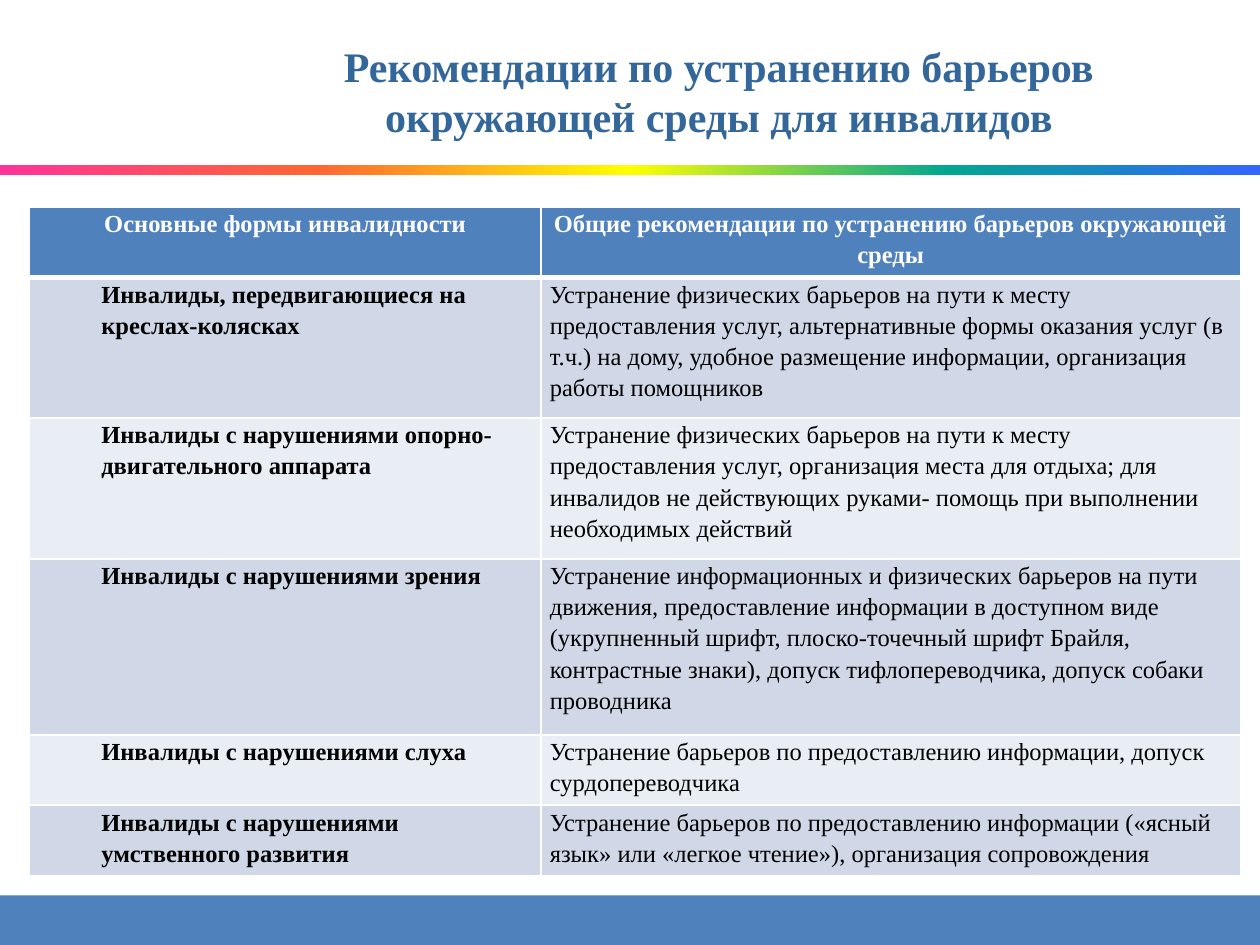
from typing import NamedTuple

from lxml.etree import SubElement
from pptx import Presentation
from pptx.dml.color import RGBColor
from pptx.enum.shapes import MSO_SHAPE
from pptx.enum.text import MSO_ANCHOR, PP_ALIGN
from pptx.oxml.ns import qn
from pptx.util import Pt

FONT = "Times New Roman"
HEX = {
    "title": "336699",
    "blue": "4F81BD",
    "dark": "D0D8E8",
    "light": "E9EDF4",
    "white": "FFFFFF",
    "black": "000000",
}
RAINBOW = ["FF3399", "FF6633", "FFFF00", "01A78F", "3366FF"]


class Row(NamedTuple):
    height: float
    form: str
    advice: str


ROWS = [
    Row(40.2, "Основные формы инвалидности",
        "Общие рекомендации по устранению барьеров окружающей среды"),
    Row(80.5, "Инвалиды, передвигающиеся на креслах-колясках",
        "Устранение физических барьеров на пути к месту предоставления услуг, "
        "альтернативные формы оказания услуг (в т.ч.) на дому, удобное "
        "размещение информации, организация работы помощников"),
    Row(80.5, "Инвалиды с нарушениями опорно-двигательного аппарата",
        "Устранение физических барьеров на пути к месту предоставления услуг, "
        "организация места для отдыха; для инвалидов не действующих руками- "
        "помощь при выполнении необходимых действий"),
    Row(100.6, "Инвалиды с нарушениями зрения",
        "Устранение информационных и физических барьеров на пути движения, "
        "предоставление информации в доступном виде (укрупненный шрифт, "
        "плоско-точечный шрифт Брайля, контрастные знаки), допуск "
        "тифлопереводчика, допуск собаки проводника"),
    Row(40.2, "Инвалиды с нарушениями слуха",
        "Устранение барьеров по предоставлению информации, допуск "
        "сурдопереводчика"),
    Row(40.2, "Инвалиды с нарушениями умственного развития",
        "Устранение барьеров по предоставлению информации («ясный язык» или "
        "«легкое чтение»), организация сопровождения"),
]
COLS = [292.3, 399.6]


def color(name: str) -> RGBColor:
    return RGBColor.from_string(HEX[name])


def style(para, size: float, name: str, bold: bool) -> None:
    font = para.font
    font.name, font.size, font.bold = FONT, Pt(size), bold
    font.color.rgb = color(name)


def add_bar(slide, top: float, height: float):
    bar = slide.shapes.add_shape(
        MSO_SHAPE.RECTANGLE, 0, Pt(top), Pt(720), Pt(height))
    bar.shadow.inherit = False
    bar.line.fill.background()
    return bar


def add_rainbow(slide) -> None:
    bar = add_bar(slide, 94.3, 5.8)
    bar.fill.gradient()
    bar.fill.gradient_angle = 0
    stops = bar.element.find(".//" + qn("a:gsLst"))
    for old in list(stops):
        stops.remove(old)
    for i, value in enumerate(RAINBOW):
        stop = SubElement(stops, qn("a:gs"), pos=str(i * 25000))
        SubElement(stop, qn("a:srgbClr"), val=value)


def add_title(slide) -> None:
    box = slide.shapes.add_textbox(Pt(121.7), Pt(15.1), Pt(578.2), Pt(73.4))
    frame = box.text_frame
    frame.word_wrap = True
    frame.vertical_anchor = MSO_ANCHOR.MIDDLE
    frame.margin_left = frame.margin_right = Pt(40)
    para = frame.paragraphs[0]
    para.text = ("Рекомендации по устранению барьеров "
                 "окружающей среды для инвалидов")
    para.alignment = PP_ALIGN.CENTER
    style(para, 24, "title", True)


def add_edges(cell, top: float, bottom: float) -> None:
    """Draw white borders; these must precede the cell's fill in the XML."""
    props = cell._tc.get_or_add_tcPr()
    for side, width in (("L", 1), ("R", 1), ("T", top), ("B", bottom)):
        line = SubElement(props, qn("a:ln" + side), w=str(Pt(width)))
        fill = SubElement(line, qn("a:solidFill"))
        SubElement(fill, qn("a:srgbClr"), val=HEX["white"])


def fill_cell(cell, text: str, row: int, col: int) -> None:
    head = row == 0
    add_edges(cell, 3 if row == 1 else 1, 3 if head else 1)
    cell.fill.solid()
    cell.fill.fore_color.rgb = color(
        "blue" if head else "dark" if row % 2 else "light")
    cell.margin_left = cell.margin_right = Pt(5)
    cell.margin_top = cell.margin_bottom = 0
    para = cell.text_frame.paragraphs[0]
    para.text = text
    para.line_spacing = 1.15
    para.space_after = Pt(10)
    para.alignment = PP_ALIGN.CENTER if head else PP_ALIGN.LEFT
    if col == 0 and not head:
        para._p.get_or_add_pPr().set("marL", str(Pt(36)))
    style(para, 14, "white" if head else "black", head or col == 0)


def add_grid(slide) -> None:
    height = sum(row.height for row in ROWS)
    grid = slide.shapes.add_table(
        len(ROWS), len(COLS), Pt(16.9), Pt(118.2),
        Pt(sum(COLS)), Pt(height)).table
    for col, width in zip(grid.columns, COLS):
        col.width = Pt(width)
    for r, row in enumerate(ROWS):
        grid.rows[r].height = Pt(row.height)
        for c, text in enumerate((row.form, row.advice)):
            fill_cell(grid.cell(r, c), text, r, c)


def main() -> None:
    deck = Presentation()
    deck.slide_width, deck.slide_height = Pt(720), Pt(540)
    slide = deck.slides.add_slide(deck.slide_layouts[6])
    foot = add_bar(slide, 511.7, 28.3)
    foot.fill.solid()
    foot.fill.fore_color.rgb = color("blue")
    add_rainbow(slide)
    add_title(slide)
    add_grid(slide)
    deck.save("out.pptx")


if __name__ == "__main__":
    main()
